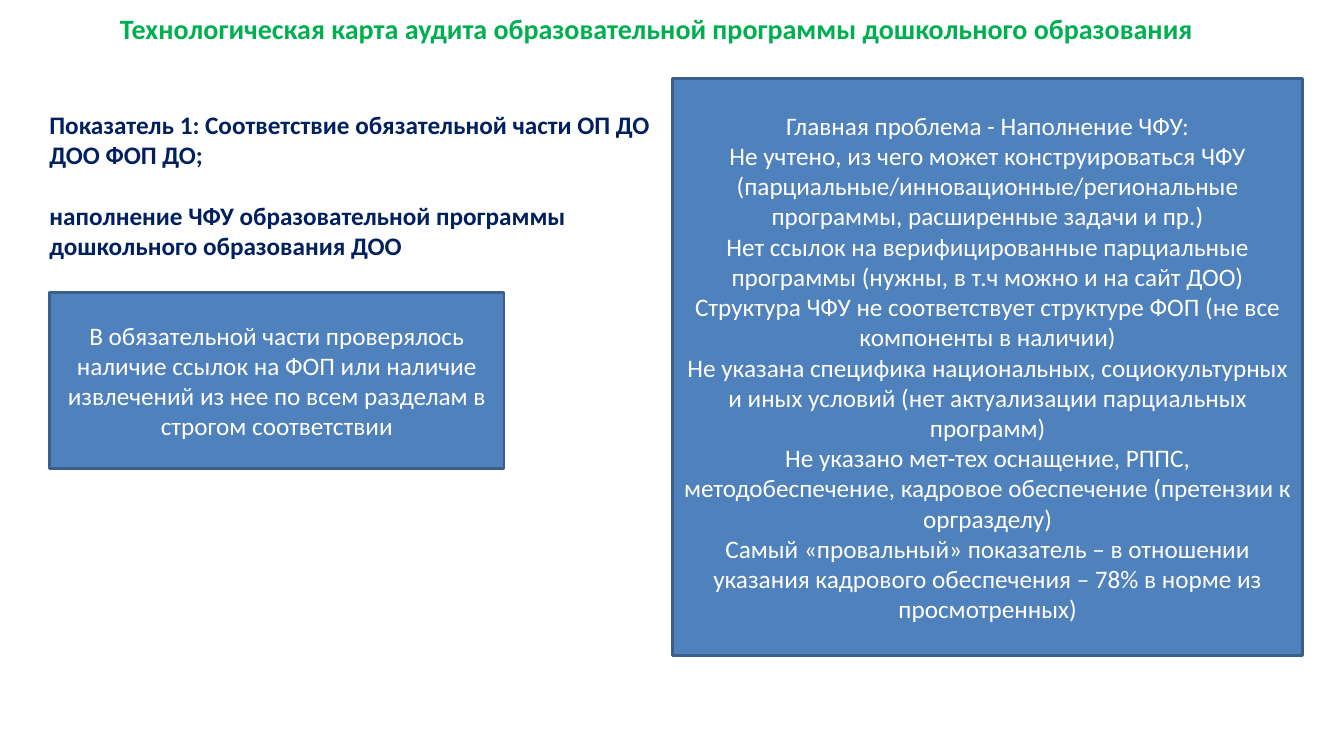
"""Build the slide on auditing a preschool education programme."""
from dataclasses import dataclass

from pptx import Presentation
from pptx.dml.color import RGBColor
from pptx.enum.shapes import MSO_SHAPE
from pptx.enum.text import MSO_ANCHOR, PP_ALIGN
from pptx.slide import Slide
from pptx.text.text import TextFrame
from pptx.util import Inches, Pt


@dataclass(frozen=True)
class Block:
    left: float
    top: float
    width: float
    height: float
    paragraphs: tuple[str, ...]
    color: str = "FFFFFF"
    size: int = 18
    gap: int = 0


HEADINGS = (
    Block(1.19, 0.11, 10.96, 0.34,
          ("Технологическая карта аудита образовательной программы дошкольного образования",),
          color="00AF50", size=20),
    Block(0.49, 1.08, 6.5, 1.82,
          ("Показатель 1: Соответствие обязательной части ОП ДО ДОО ФОП ДО;",
           "наполнение ЧФУ образовательной программы дошкольного образования ДОО"),
          color="002060", gap=22),
)

PANELS = (
    Block(0.49, 2.9, 4.51, 1.75,
          ("В обязательной части проверялось наличие ссылок на ФОП или наличие "
           "извлечений из нее по всем разделам в строгом соответствии",)),
    Block(6.67, 0.78, 6.25, 5.72,
          ("Главная проблема - Наполнение ЧФУ:",
           "Не учтено, из чего может конструироваться ЧФУ "
           "(парциальные/инновационные/региональные программы, расширенные задачи и пр.)",
           "Нет ссылок на верифицированные парциальные программы "
           "(нужны, в т.ч можно и на сайт ДОО)",
           "Структура ЧФУ не соответствует структуре ФОП (не все компоненты в наличии)",
           "Не указана специфика национальных, социокультурных и иных условий "
           "(нет актуализации парциальных программ)",
           "Не указано мет-тех оснащение, РППС, методобеспечение, кадровое обеспечение "
           "(претензии к оргразделу)",
           "Самый «провальный» показатель – в отношении указания кадрового обеспечения "
           "– 78% в норме из просмотренных)")),
)


def rgb(color: str) -> RGBColor:
    return RGBColor.from_string(color)


def write_text(frame: TextFrame, block: Block, alignment: PP_ALIGN, bold: bool) -> None:
    frame.word_wrap = True
    for index, text in enumerate(block.paragraphs):
        paragraph = frame.add_paragraph() if index else frame.paragraphs[0]
        paragraph.text = text
        paragraph.alignment = alignment
        if index and block.gap:
            paragraph.space_before = Pt(block.gap)
        font = paragraph.font
        font.name = "Calibri"
        font.size = Pt(block.size)
        font.bold = bold
        font.color.rgb = rgb(block.color)


def bounds(block: Block) -> tuple[Inches, ...]:
    return tuple(Inches(length) for length in (block.left, block.top, block.width, block.height))


def add_heading(slide: Slide, block: Block) -> None:
    frame = slide.shapes.add_textbox(*bounds(block)).text_frame
    frame.margin_left = frame.margin_top = frame.margin_right = frame.margin_bottom = Inches(0)
    write_text(frame, block, PP_ALIGN.LEFT, bold=True)


def add_panel(slide: Slide, block: Block) -> None:
    shape = slide.shapes.add_shape(MSO_SHAPE.RECTANGLE, *bounds(block))
    shape.shadow.inherit = False
    shape.fill.solid()
    shape.fill.fore_color.rgb = rgb("4F81BD")
    shape.line.color.rgb = rgb("3A5F8C")
    shape.line.width = Pt(2)
    shape.text_frame.vertical_anchor = MSO_ANCHOR.MIDDLE
    write_text(shape.text_frame, block, PP_ALIGN.CENTER, bold=False)


def main() -> None:
    presentation = Presentation()
    presentation.slide_width = Inches(13.33)
    presentation.slide_height = Inches(7.5)
    slide = presentation.slides.add_slide(presentation.slide_layouts[6])
    for heading in HEADINGS:
        add_heading(slide, heading)
    for panel in PANELS:
        add_panel(slide, panel)
    presentation.save("out.pptx")


if __name__ == "__main__":
    main()
